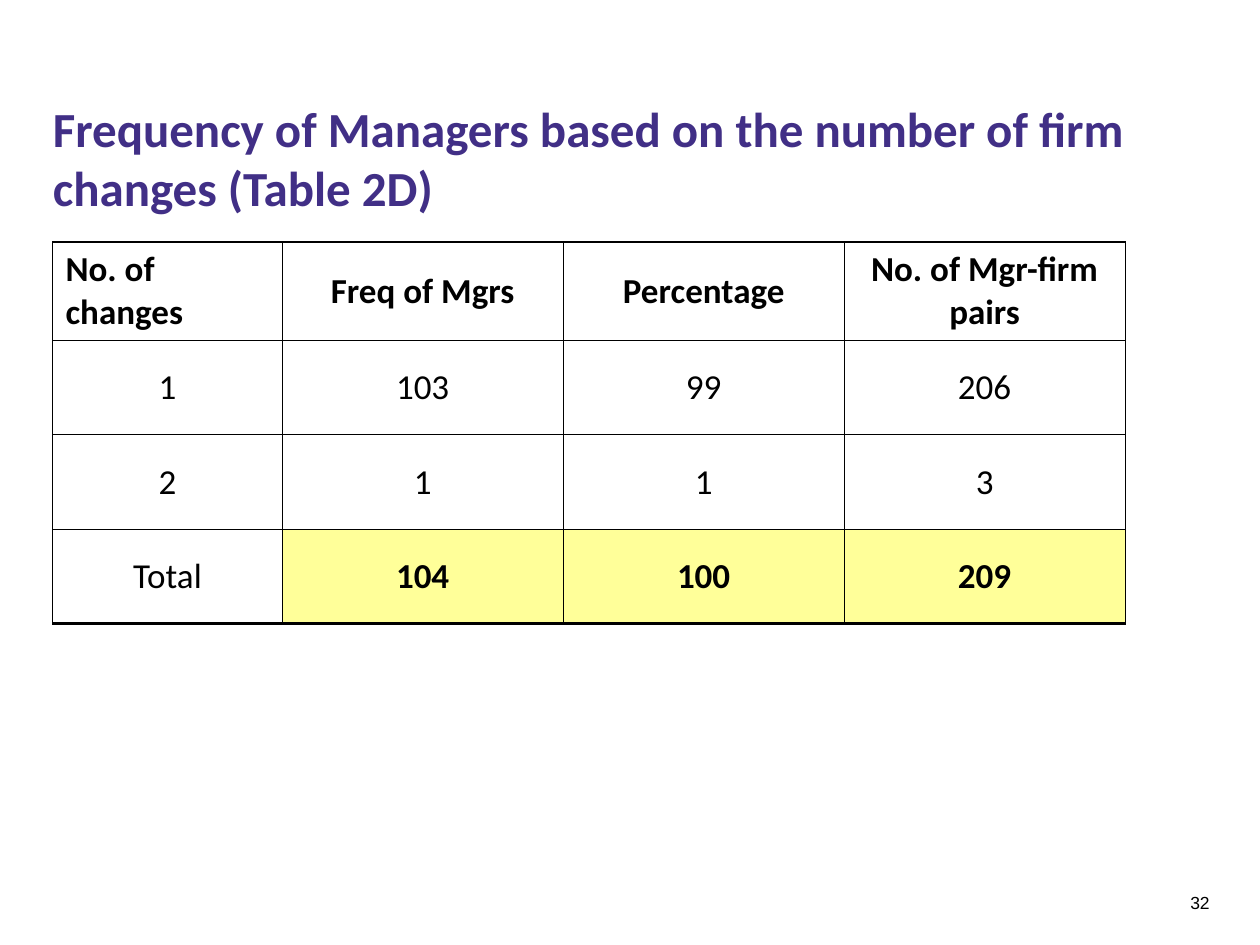
"""Build the slide on the frequency of managers by number of firm changes."""
import pptx
import pptx.dml.color
import pptx.enum.text
import pptx.oxml.ns
import pptx.util
from lxml import etree

Inches = pptx.util.Inches
Pt = pptx.util.Pt
RGBColor = pptx.dml.color.RGBColor
PP_ALIGN = pptx.enum.text.PP_ALIGN
MSO_ANCHOR = pptx.enum.text.MSO_ANCHOR
qn = pptx.oxml.ns.qn

PURPLE = RGBColor(0x41, 0x2F, 0x86)
BLACK = RGBColor(0, 0, 0)
YELLOW = RGBColor(0xFF, 0xFF, 0x99)

ROWS = [
    ["No. of changes", "Freq of Mgrs", "Percentage", "No. of Mgr-firm pairs"],
    ["1", "103", "99", "206"],
    ["2", "1", "1", "3"],
    ["Total", "104", "100", "209"],
]
COL_WIDTHS = [1.82, 2.23, 2.23, 2.23]
ROW_HEIGHT = 0.75
RULES = [1, 1, 0.75, 0.75, 2]


def style_text(tf, font, size, color, bold, align):
    for p in tf.paragraphs:
        p.alignment = align
        for r in p.runs:
            r.font.name = font
            r.font.size = Pt(size)
            r.font.color.rgb = color
            r.font.bold = bold


def set_border(cell, side, width):
    tcPr = cell._tc.get_or_add_tcPr()
    ln = etree.SubElement(tcPr, qn("a:ln" + side), w=str(Pt(width)))
    fill = etree.SubElement(ln, qn("a:solidFill"))
    etree.SubElement(fill, qn("a:srgbClr"), val=str(BLACK))


prs = pptx.Presentation()
prs.slide_width = Inches(10)
prs.slide_height = Inches(7.5)
s = prs.slides.add_slide(prs.slide_layouts[5])

title = s.shapes.title
title.left, title.top = Inches(0.42), Inches(0.75)
title.width, title.height = Inches(9.14), Inches(1)
tf = title.text_frame
tf.text = "Frequency of Managers based on the number of firm changes (Table 2D)"
tf.word_wrap = True
tf.vertical_anchor = MSO_ANCHOR.MIDDLE
tf.margin_left = tf.margin_right = tf.margin_top = tf.margin_bottom = 0
style_text(tf, "Calibri", 28, PURPLE, True, PP_ALIGN.LEFT)

table = s.shapes.add_table(
    len(ROWS), len(COL_WIDTHS), Inches(0.42), Inches(1.92),
    Inches(sum(COL_WIDTHS)), Inches(ROW_HEIGHT * len(ROWS)),
).table
table.first_row = False
table.horz_banding = False
for column, width in zip(table.columns, COL_WIDTHS):
    column.width = Inches(width)

last = len(ROWS) - 1
for i, row in enumerate(ROWS):
    table.rows[i].height = Inches(ROW_HEIGHT)
    for j, text in enumerate(row):
        cell = table.cell(i, j)
        cell.text = text
        cell.vertical_anchor = MSO_ANCHOR.MIDDLE
        total = i == last and j > 0
        align = PP_ALIGN.LEFT if i == j == 0 else PP_ALIGN.CENTER
        style_text(cell.text_frame, "Calibri", 20, BLACK, i == 0 or total, align)
        for side, width in zip("LRTB", [0.75, 0.75, RULES[i], RULES[i + 1]]):
            set_border(cell, side, width)
        if total:
            cell.fill.solid()
            cell.fill.fore_color.rgb = YELLOW
        else:
            cell.fill.background()

number = s.shapes.add_textbox(Inches(9.25), Inches(7.08), Inches(0.35), Inches(0.17))
tf = number.text_frame
tf.text = "32"
tf.word_wrap = True
tf.margin_left = tf.margin_right = tf.margin_top = tf.margin_bottom = 0
style_text(tf, "Arial", 10, BLACK, False, PP_ALIGN.RIGHT)

prs.save("out.pptx")
